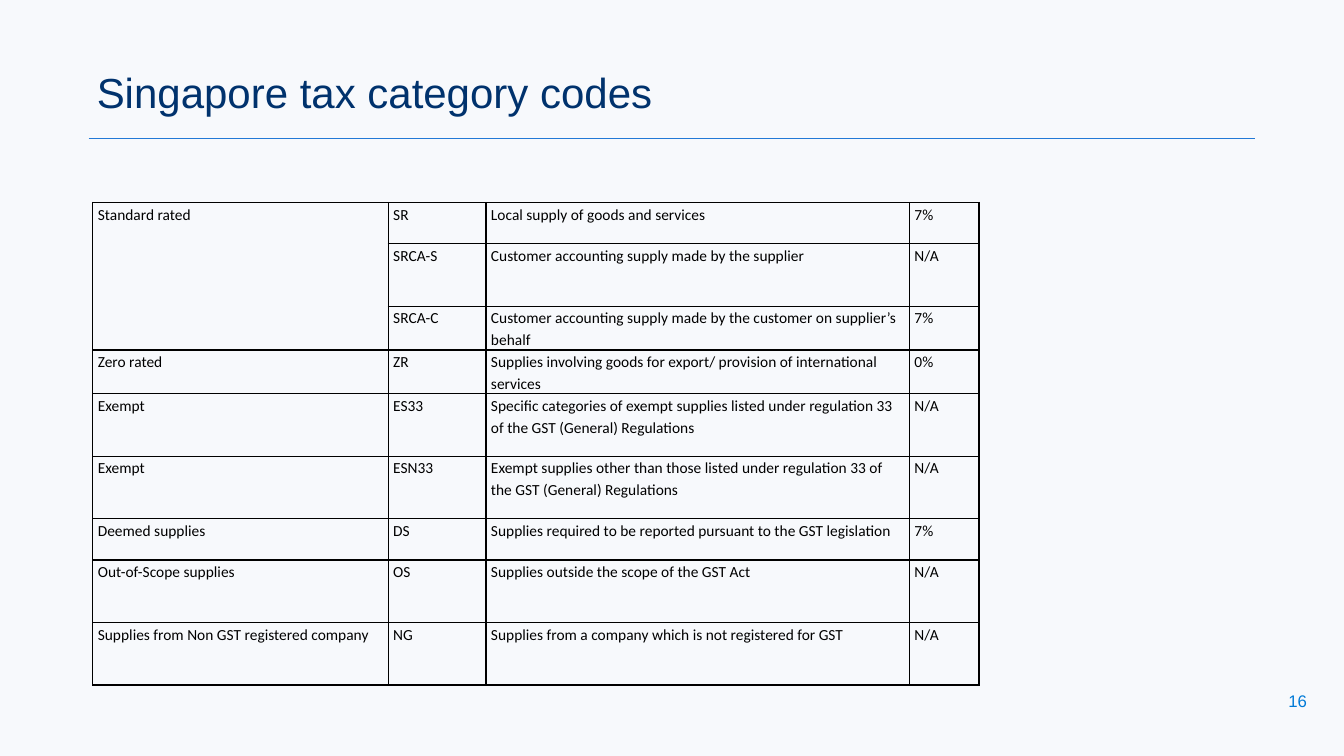
from dataclasses import dataclass
from lxml.etree import SubElement
from pptx import Presentation
from pptx.dml.color import RGBColor as RGB
from pptx.enum.text import MSO_ANCHOR as Anchor, PP_ALIGN as Align
from pptx.oxml.ns import qn
from pptx.util import Inches, Pt


@dataclass(frozen=True)
class Theme:
    back: str = "F7F9FC"
    navy: str = "00326D"
    rule: str = "2279D6"
    blue: str = "007AD7"
    ink: str = "000000"
    head: str = "Arial"
    body: str = "Calibri"
    big: int = 30
    note: int = 12
    small: int = 11
    edge: int = 1


WIDTHS = [2.93, 0.97, 4.2, 0.69]
SHORT, TALL = 0.41, 0.62

# Row height, category, code, meaning, rate
CODES = [
    (SHORT, "Standard rated", "SR", "Local supply of goods and services", "7%"),
    (TALL, "", "SRCA-S", "Customer accounting supply made by the supplier", "N/A"),
    (SHORT, "", "SRCA-C",
     "Customer accounting supply made by the customer on supplier’s behalf", "7%"),
    (SHORT, "Zero rated", "ZR",
     "Supplies involving goods for export/ provision of international services", "0%"),
    (TALL, "Exempt", "ES33",
     "Specific categories of exempt supplies listed under regulation 33 "
     "of the GST (General) Regulations", "N/A"),
    (TALL, "Exempt", "ESN33",
     "Exempt supplies other than those listed under regulation 33 of "
     "the GST (General) Regulations", "N/A"),
    (SHORT, "Deemed supplies", "DS",
     "Supplies required to be reported pursuant to the GST legislation", "7%"),
    (TALL, "Out-of-Scope supplies", "OS", "Supplies outside the scope of the GST Act", "N/A"),
    (TALL, "Supplies from Non GST registered company", "NG",
     "Supplies from a company which is not registered for GST", "N/A"),
]


class Deck:
    def __init__(self, theme):
        self.theme = theme
        self.prs = Presentation()
        self.prs.slide_width, self.prs.slide_height = Inches(13.33), Inches(7.5)
        self.slide = self.prs.slides.add_slide(self.prs.slide_layouts[5])
        fill = self.slide.background.fill
        fill.solid()
        fill.fore_color.rgb = RGB.from_string(theme.back)

    def label(self, frame, text, font, size, color, align=Align.LEFT, space=1.0):
        frame.text = text
        frame.word_wrap = True
        para = frame.paragraphs[0]
        para.alignment, para.line_spacing = align, space
        for run in para.runs:
            run.font.name, run.font.size = font, Pt(size)
            run.font.color.rgb = RGB.from_string(color)

    def title(self, text, x, y, w, h):
        box = self.slide.shapes.title
        box.left, box.top, box.width, box.height = map(Inches, (x, y, w, h))
        box.text_frame.vertical_anchor = Anchor.MIDDLE
        self.label(box.text_frame, text, self.theme.head, self.theme.big,
                   self.theme.navy, space=0.9)

    def rule(self, x, y, end):
        line = self.slide.shapes.add_connector(1, *map(Inches, (x, y, end, y)))
        line.line.color.rgb = RGB.from_string(self.theme.rule)
        line.line.width = Pt(0.5)
        SubElement(line._element.spPr, qn("a:effectLst"))

    def number(self, text, x, y, w, h):
        frame = self.slide.shapes.add_textbox(*map(Inches, (x, y, w, h))).text_frame
        frame.vertical_anchor = Anchor.MIDDLE
        self.label(frame, text, self.theme.head, self.theme.note,
                   self.theme.blue, Align.CENTER)

    def cell(self, cell, text):
        cell.margin_left = cell.margin_right = Inches(0.05)
        cell.margin_top = cell.margin_bottom = 0
        self.label(cell.text_frame, text, self.theme.body, self.theme.small,
                   self.theme.ink, space=1.15)
        # Borders come before the fill
        props = cell._tc.get_or_add_tcPr()
        for side in "LRTB":
            line = SubElement(props, qn(f"a:ln{side}"), w=str(Pt(self.theme.edge)))
            fill = SubElement(line, qn("a:solidFill"))
            SubElement(fill, qn("a:srgbClr"), val=self.theme.ink)
        cell.fill.background()

    def table(self, rows, widths, x, y):
        size = sum(widths), sum(row[0] for row in rows)
        grid = self.slide.shapes.add_table(
            len(rows), len(widths), *map(Inches, (x, y, *size))).table
        grid.first_row = grid.horz_banding = False
        for col, width in zip(grid.columns, widths):
            col.width = Inches(width)
        for r, (height, *texts) in enumerate(rows):
            grid.rows[r].height = Inches(height)
            for c, text in enumerate(texts):
                self.cell(grid.cell(r, c), text)
        return grid


def main():
    deck = Deck(Theme())
    # Heading
    deck.title("Singapore tax category codes", 0.86, 0.64, 9.31, 0.61)
    deck.rule(0.88, 1.37, 12.45)
    # Tax codes, with one category across the first three rows
    grid = deck.table(CODES, WIDTHS, 0.92, 2.01)
    grid.cell(0, 0).merge(grid.cell(2, 0))
    # Page number
    deck.number("16", 12.65, 6.75, 0.44, 0.4)
    deck.prs.save("out.pptx")


if __name__ == "__main__":
    main()
